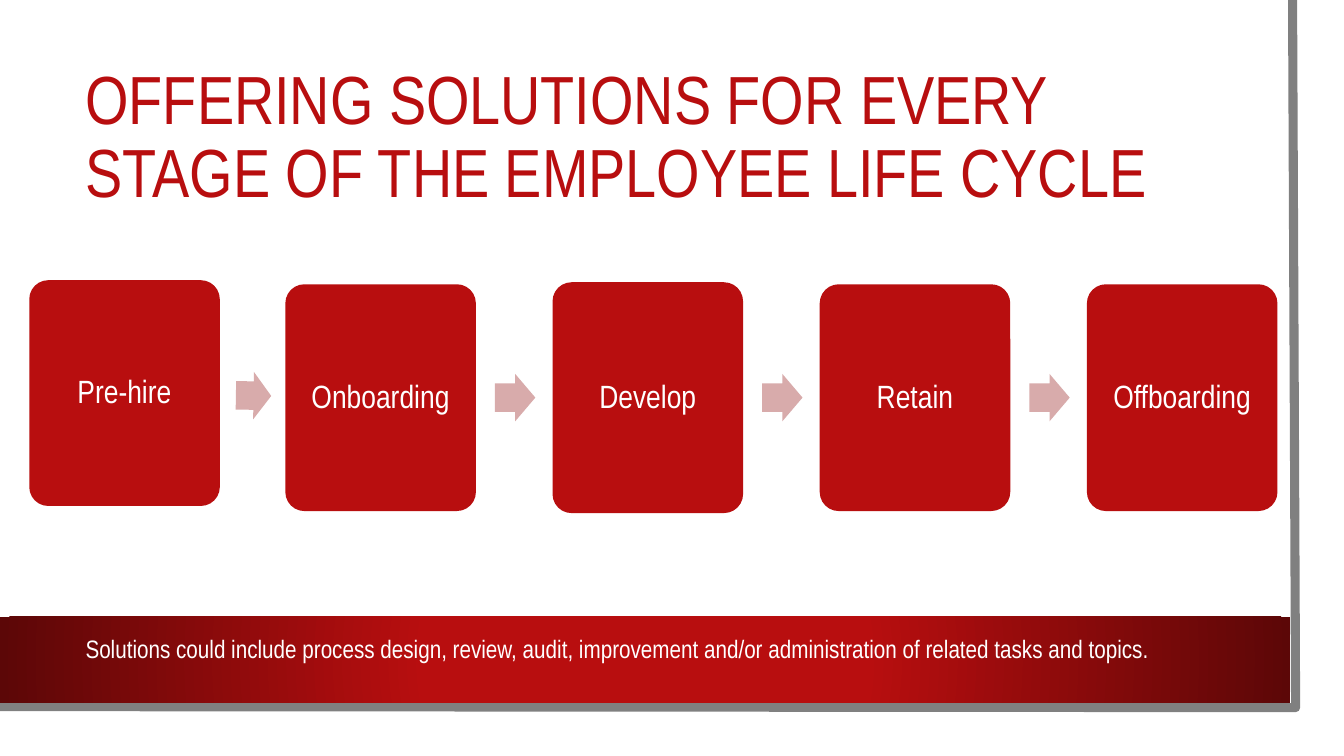
from lxml.etree import SubElement
from pptx import Presentation
from pptx.dml.color import RGBColor
from pptx.enum.shapes import MSO_SHAPE as Shape
from pptx.enum.text import MSO_ANCHOR as Anchor, PP_ALIGN as Align
from pptx.oxml.ns import qn
from pptx.util import Inches, Pt

RED = RGBColor(0xB8, 0x0E, 0x0F)
DARK_RED = RGBColor(0x5C, 0x07, 0x07)
PINK = RGBColor(0xD8, 0xAB, 0xAB)
GRAY = RGBColor(0x80, 0x80, 0x80)
WHITE = RGBColor(0xFF, 0xFF, 0xFF)
FONT = "Arial Narrow"

STAGES = [
    ("Pre-hire", 0.29, 2.78, 2.24),
    ("Onboarding", 2.83, 2.82, 2.25),
    ("Develop", 5.48, 2.8, 2.29),
    ("Retain", 8.13, 2.82, 2.25),
    ("Offboarding", 10.78, 2.82, 2.25),
]
STAGE_WIDTH = 1.89


def write_text(shape, text, size, color, anchor, align=Align.LEFT, spacing=1.0):
    """Put one formatted, wrapping paragraph into a shape."""
    frame = shape.text_frame
    frame.word_wrap = True
    frame.vertical_anchor = anchor
    frame.text = text
    paragraph = frame.paragraphs[0]
    paragraph.alignment = align
    paragraph.line_spacing = spacing
    font = paragraph.runs[0].font
    font.name, font.size, font.color.rgb = FONT, Pt(size), color


def add_filled(slide, kind, left, top, width, height, color):
    """Add a flat preset shape without outline or shadow."""
    shape = slide.shapes.add_shape(
        kind, Inches(left), Inches(top), Inches(width), Inches(height))
    shape.shadow.inherit = False
    shape.fill.solid()
    shape.fill.fore_color.rgb = color
    shape.line.fill.background()
    return shape


def add_text(slide, left, top, width, height, *text_format):
    """Add a text box."""
    box = slide.shapes.add_textbox(
        Inches(left), Inches(top), Inches(width), Inches(height))
    write_text(box, *text_format)


def add_page_edge(slide, left, right, bottom):
    """Draw the gray edge along the right and bottom of the page."""
    builder = slide.shapes.build_freeform(Inches(right - 0.03), 0)
    builder.add_line_segments(
        [(Inches(right), Inches(bottom)), (Inches(left), Inches(bottom - 0.01))],
        close=False)
    edge = builder.convert_to_shape()
    edge.shadow.inherit = False
    edge.fill.background()
    edge.line.color.rgb = GRAY
    edge.line.width = Pt(6.5)


def add_footer(slide, left, top, width, height):
    """Draw the red band, dark towards its ends, with its note."""
    band = add_filled(slide, Shape.RECTANGLE, left, top, width, height, RED)
    band.fill.gradient()
    for stop, (position, color) in zip(
            band.fill.gradient_stops, [(0.34, RED), (1, DARK_RED)]):
        stop.position = position
        stop.color.rgb = color
    gradient = band._element.spPr.find(qn("a:gradFill"))
    gradient.remove(gradient.find(qn("a:lin")))
    circle = SubElement(gradient, qn("a:path"), path="circle")
    SubElement(circle, qn("a:fillToRect"),
               {side: "50000" for side in "ltrb"})
    add_text(slide, left + 0.75, top + 0.11, 10.77, 0.71,
             "Solutions could include process design, review, audit, improvement "
             "and/or administration of related tasks and topics.",
             18, WHITE, Anchor.TOP)


def add_stage(slide, name, left, top, width, height):
    """Draw one stage of the life cycle."""
    card = add_filled(
        slide, Shape.ROUNDED_RECTANGLE, left, top, width, height, RED)
    card.adjustments[0] = 0.1
    write_text(card, name, 23, WHITE, Anchor.MIDDLE, Align.CENTER, 0.9)


def add_arrow(slide, left, top, width, height, rotation):
    """Draw the arrow between two stages."""
    arrow = add_filled(
        slide, Shape.RIGHT_ARROW, left, top, width, height, PINK)
    arrow.adjustments[0] = 0.6
    arrow.rotation = rotation


def add_life_cycle(slide):
    """Draw the stages and the arrows that join them."""
    for index, (name, left, top, height) in enumerate(STAGES):
        add_stage(slide, name, left, top, STAGE_WIDTH, height)
        if index == 0:
            add_arrow(slide, left + 2.05, 3.69, 0.35, 0.47, 1)
        elif index < len(STAGES) - 1:
            add_arrow(slide, left + 2.08, 3.71, 0.4, 0.47, 0)


def main():
    """Build and save the slide."""
    presentation = Presentation()
    presentation.slide_width = Inches(13.33)
    presentation.slide_height = Inches(7.5)
    slide = presentation.slides.add_slide(presentation.slide_layouts[6])
    add_page_edge(slide, -0.03, 12.85, 7.02)
    add_footer(slide, 0, 6.12, 12.8, 0.85)
    add_text(slide, 0.75, 0.75, 11.37, 1.26,
             "OFFERING SOLUTIONS FOR EVERY STAGE OF THE EMPLOYEE LIFE CYCLE",
             48.6, RED, Anchor.MIDDLE, Align.LEFT, 0.9)
    add_life_cycle(slide)
    presentation.save("out.pptx")


if __name__ == "__main__":
    main()
